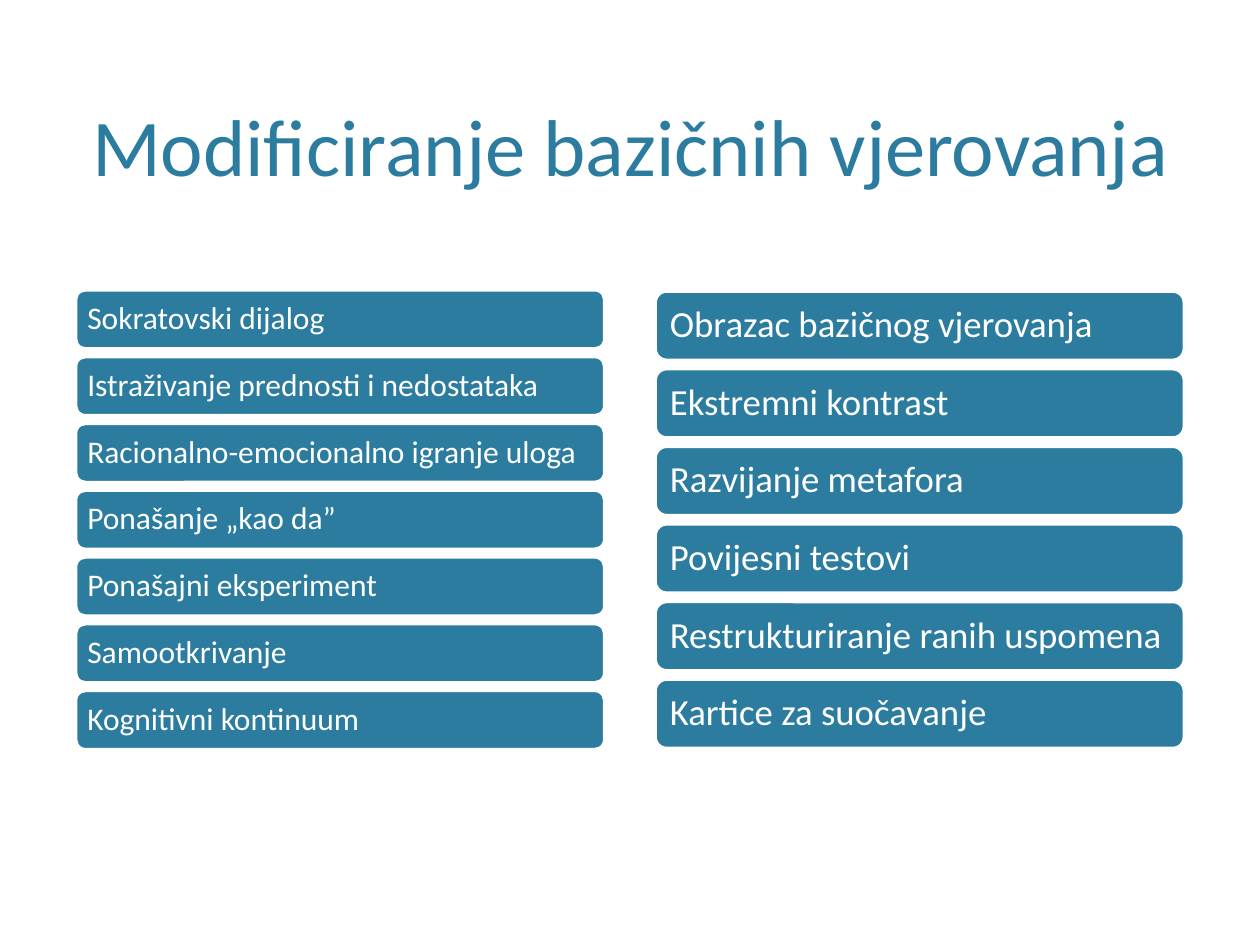
from dataclasses import dataclass

from pptx import Presentation
from pptx.dml.color import RGBColor
from pptx.enum.shapes import MSO_SHAPE
from pptx.enum.text import MSO_ANCHOR, PP_ALIGN
from pptx.slide import Slide
from pptx.util import Inches, Pt

TEAL = RGBColor(0x2C, 0x7C, 0x9F)
WHITE = RGBColor(0xFF, 0xFF, 0xFF)
FONT = "Calibri"
BAR_WIDTH = 4.2


@dataclass
class TechniqueColumn:
    left: float
    first_top: float
    last_top: float
    bar_height: float
    inset: float
    font_size: int
    techniques: list[str]


COLUMNS = [
    TechniqueColumn(0.6, 2.3, 5.48, 0.47, 0.07, 18, [
        "Sokratovski dijalog",
        "Istraživanje prednosti i nedostataka",
        "Racionalno-emocionalno igranje uloga",
        "Ponašanje „kao da”",
        "Ponašajni eksperiment",
        "Samootkrivanje",
        "Kognitivni kontinuum",
    ]),
    TechniqueColumn(5.2, 2.31, 5.39, 0.55, 0.09, 21, [
        "Obrazac bazičnog vjerovanja",
        "Ekstremni kontrast",
        "Razvijanje metafora",
        "Povijesni testovi",
        "Restrukturiranje ranih uspomena",
        "Kartice za suočavanje",
    ]),
]


def set_title(slide: Slide, text: str) -> None:
    title = slide.shapes.title
    title.left, title.top = Inches(0.6), Inches(0.12)
    title.width, title.height = Inches(8.8), Inches(1.46)
    frame = title.text_frame
    frame.text = text
    frame.vertical_anchor = MSO_ANCHOR.BOTTOM
    heading = frame.paragraphs[0]
    heading.alignment = PP_ALIGN.CENTER
    heading.font.name = FONT
    heading.font.size = Pt(46)
    heading.font.color.rgb = TEAL


def draw_column(slide: Slide, column: TechniqueColumn) -> None:
    group = slide.shapes.add_group_shape()
    pitch = (column.last_top - column.first_top) / (len(column.techniques) - 1)
    for row, technique in enumerate(column.techniques):
        bar = group.shapes.add_shape(
            MSO_SHAPE.ROUNDED_RECTANGLE,
            Inches(column.left), Inches(column.first_top + row * pitch),
            Inches(BAR_WIDTH), Inches(column.bar_height))
        bar.shadow.inherit = False
        bar.fill.solid()
        bar.fill.fore_color.rgb = TEAL
        bar.line.color.rgb = WHITE
        bar.line.width = Pt(2)

        # Label inside the bar
        frame = bar.text_frame
        frame.text = technique
        frame.word_wrap = True
        frame.vertical_anchor = MSO_ANCHOR.MIDDLE
        frame.margin_left = frame.margin_right = Inches(column.inset)
        frame.margin_top = frame.margin_bottom = Inches(column.inset)
        label = frame.paragraphs[0]
        label.alignment = PP_ALIGN.LEFT
        label.line_spacing = 0.9
        label.font.name = FONT
        label.font.size = Pt(column.font_size)
        label.font.color.rgb = WHITE


def main() -> None:
    presentation = Presentation()
    presentation.slide_width = Inches(10)
    presentation.slide_height = Inches(7.5)
    slide = presentation.slides.add_slide(presentation.slide_layouts[5])

    set_title(slide, "Modificiranje bazičnih vjerovanja")
    for column in COLUMNS:
        draw_column(slide, column)

    presentation.save("out.pptx")


if __name__ == "__main__":
    main()
